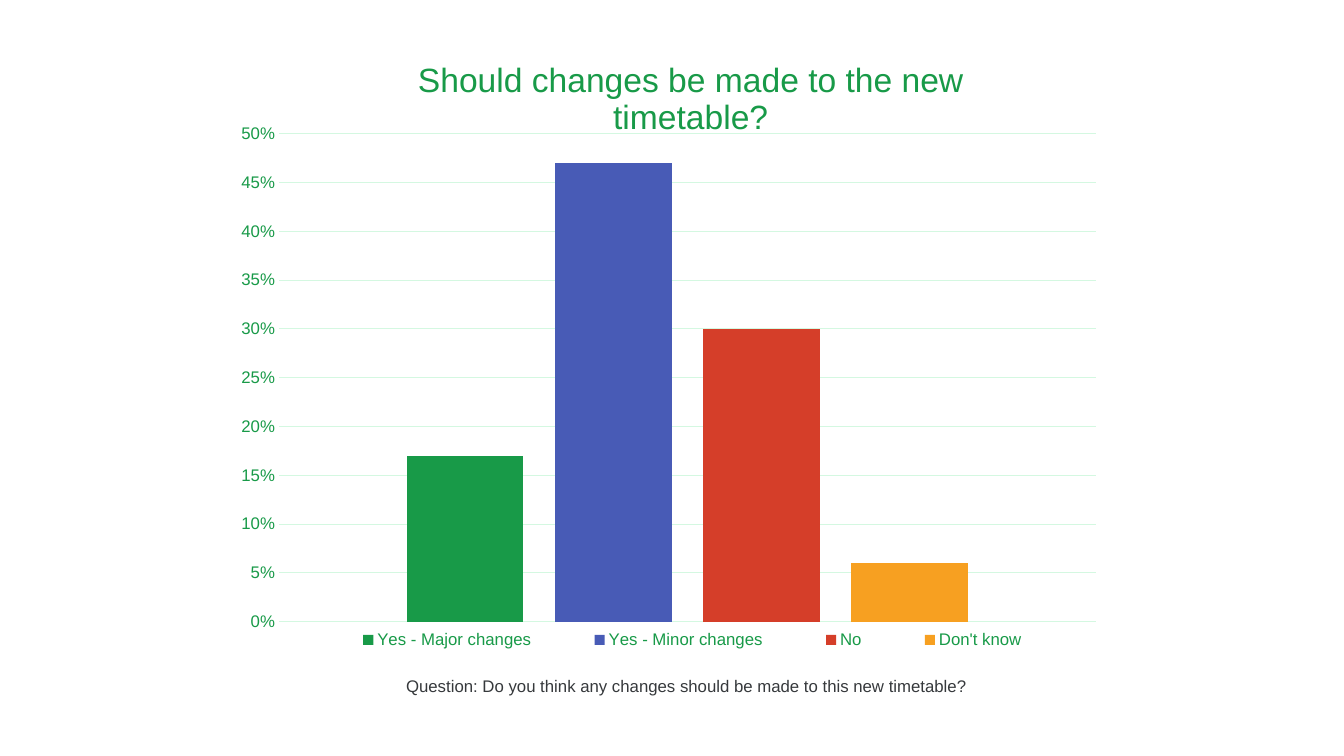
from dataclasses import dataclass

from lxml.etree import SubElement
from pptx import Presentation
from pptx.chart.chart import Chart
from pptx.chart.data import CategoryChartData
from pptx.dml.color import RGBColor
from pptx.enum.chart import XL_CHART_TYPE as ChartType
from pptx.enum.chart import XL_LEGEND_POSITION as LegendPosition
from pptx.enum.chart import XL_TICK_MARK as TickMark
from pptx.enum.text import PP_ALIGN as Align
from pptx.oxml.ns import qn
from pptx.util import Cm, Pt

FONT = "Arial"
COLORS = {
    "green": "189A48",
    "blue": "485BB6",
    "red": "D53E29",
    "orange": "F7A021",
    "grid": "D4F8E1",
    "text": "36393C",
}


@dataclass(frozen=True)
class Answer:
    label: str
    share: float
    color: str


@dataclass(frozen=True)
class Area:
    """A rectangle on the slide, in centimetres."""
    left: float
    top: float
    width: float
    height: float

    def lengths(self) -> list[int]:
        return [Cm(side) for side in (self.left, self.top, self.width, self.height)]


ANSWERS = [
    Answer("Yes - Major changes", 0.17, "green"),
    Answer("Yes - Minor changes", 0.47, "blue"),
    Answer("No", 0.3, "red"),
    Answer("Don't know", 0.06, "orange"),
]

CHART_AREA = Area(5.64, 1.17, 22.58, 15.88)
TITLE_AREA = Area(10.38, 1.3, 18, 1)
PLOT_AREA = Area(7.03, 3.37, 20.59, 12.3)
LEGEND_AREA = Area(7.7, 15.7, 19.5, 0.85)
QUESTION_AREA = Area(2.41, 17.04, 29.79, 1.24)


def rgb(name: str) -> RGBColor:
    return RGBColor.from_string(COLORS[name])


def style_font(font, size: float, color: str) -> None:
    font.name = FONT
    font.size = Pt(size)
    font.bold = False
    font.color.rgb = rgb(color)


def place_part(part, area: Area, index: int, inner: bool = False, sized: bool = True) -> None:
    """Give a chart part a fixed place, as fractions of the chart frame."""
    for old in part.findall(qn("c:layout")):
        part.remove(old)
    layout = part.makeelement(qn("c:layout"))
    part.insert(index, layout)
    manual = SubElement(layout, qn("c:manualLayout"))
    settings = {"layoutTarget": "inner"} if inner else {}
    settings |= {"xMode": "edge", "yMode": "edge"}
    settings["x"] = (area.left - CHART_AREA.left) / CHART_AREA.width
    settings["y"] = (area.top - CHART_AREA.top) / CHART_AREA.height
    if sized:
        settings["w"] = area.width / CHART_AREA.width
        settings["h"] = area.height / CHART_AREA.height
    for tag, value in settings.items():
        SubElement(manual, qn(f"c:{tag}")).set("val", str(value))


def add_survey_chart(page) -> Chart:
    data = CategoryChartData(number_format="0%")
    data.categories = ["1"]
    for answer in ANSWERS:
        data.add_series(answer.label, [answer.share])
    frame = page.shapes.add_chart(
        ChartType.COLUMN_CLUSTERED, *CHART_AREA.lengths(), data
    )
    chart = frame.chart
    style_font(chart.font, 10, "green")

    # Columns
    plot = chart.plots[0]
    plot.gap_width = 219
    plot.overlap = -27
    plot.vary_by_categories = False
    for series, answer in zip(plot.series, ANSWERS):
        series.format.fill.solid()
        series.format.fill.fore_color.rgb = rgb(answer.color)
    place_part(chart._chartSpace.chart.plotArea, PLOT_AREA, 0, inner=True)
    return chart


def style_axes(chart: Chart) -> None:
    chart.category_axis.visible = False
    axis = chart.value_axis
    axis.minimum_scale = 0
    axis.maximum_scale = 0.5
    axis.major_unit = 0.05
    axis.major_tick_mark = TickMark.NONE
    axis.minor_tick_mark = TickMark.NONE
    axis.format.line.fill.background()
    axis.has_major_gridlines = True
    grid = axis.major_gridlines.format.line
    grid.color.rgb = rgb("grid")
    grid.width = Pt(0.75)
    labels = axis.tick_labels
    labels.number_format = "0%"
    labels.number_format_is_linked = False
    style_font(labels.font, 12, "green")


def add_title_and_legend(chart: Chart) -> None:
    chart.has_title = True
    title = chart.chart_title
    title.text_frame.text = "Should changes be made to the new timetable?"
    style_font(title.text_frame.paragraphs[0].runs[0].font, 24, "green")
    place_part(title._element, TITLE_AREA, 1, sized=False)

    chart.has_legend = True
    legend = chart.legend
    legend.position = LegendPosition.BOTTOM
    legend.include_in_layout = False
    style_font(legend.font, 12, "green")
    place_part(legend._element, LEGEND_AREA, 1)


def add_question(page) -> None:
    box = page.shapes.add_textbox(*QUESTION_AREA.lengths())
    frame = box.text_frame
    frame.word_wrap = True
    frame.margin_left = frame.margin_right = 0
    frame.margin_top = frame.margin_bottom = 0
    frame.text = "Question: Do you think any changes should be made to this new timetable?"
    para = frame.paragraphs[0]
    para.alignment = Align.CENTER
    style_font(para.runs[0].font, 12, "text")


def main() -> None:
    deck = Presentation()
    deck.slide_width = Cm(33.87)
    deck.slide_height = Cm(19.05)
    page = deck.slides.add_slide(deck.slide_layouts[6])

    # Survey results
    chart = add_survey_chart(page)
    style_axes(chart)
    add_title_and_legend(chart)

    # Question asked
    add_question(page)
    deck.save("out.pptx")


if __name__ == "__main__":
    main()
